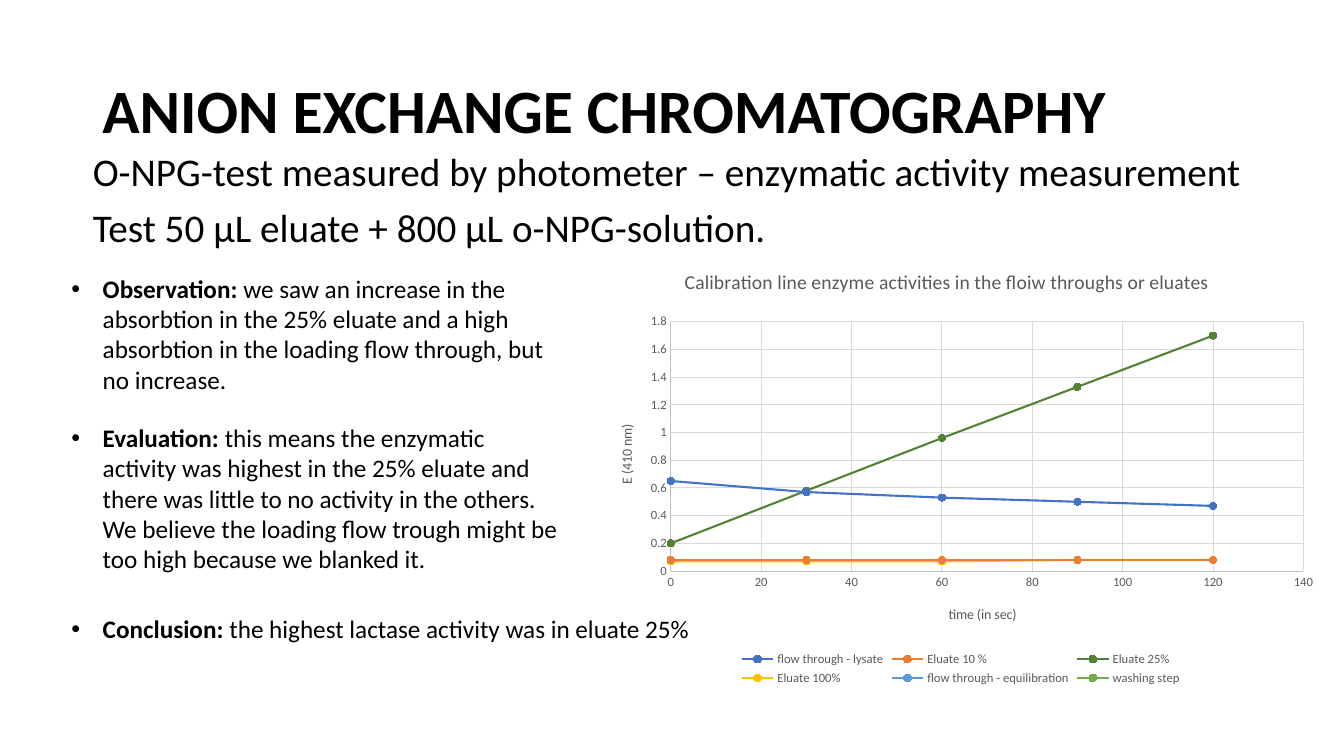
from dataclasses import dataclass

from lxml import etree
from pptx import Presentation
from pptx.chart.data import XyChartData
from pptx.dml.color import RGBColor
from pptx.enum.chart import XL_CHART_TYPE, XL_LEGEND_POSITION, XL_MARKER_STYLE, XL_TICK_MARK
from pptx.enum.text import MSO_ANCHOR
from pptx.oxml.ns import qn
from pptx.util import Cm, Pt

SCATTER = XL_CHART_TYPE.XY_SCATTER_SMOOTH
LEGEND_BOTTOM = XL_LEGEND_POSITION.BOTTOM
CIRCLE = XL_MARKER_STYLE.CIRCLE
NO_TICK = XL_TICK_MARK.NONE
MIDDLE, TOP = MSO_ANCHOR.MIDDLE, MSO_ANCHOR.TOP


@dataclass(frozen=True)
class Theme:
    font: str = "Calibri"
    text: str = "000000"
    chart_text: str = "595959"
    axis: str = "BFBFBF"
    grid: str = "D9D9D9"
    title_size: int = 44
    subtitle_size: int = 28
    body_size: int = 18
    chart_title_size: int = 14
    axis_title_size: int = 10
    label_size: int = 9


theme = Theme()


def style_font(font, size, color, bold=False):
    font.name, font.size, font.bold = theme.font, Pt(size), bold
    font.color.rgb = RGBColor.from_string(color)


def set_layout(element, index, **settings):
    """Give a chart part a manual layout, in fractions of the chart area."""
    layout = element.find(qn("c:layout"))
    if layout is None:
        layout = etree.Element(qn("c:layout"))
        element.insert(index, layout)
    manual = etree.SubElement(layout, qn("c:manualLayout"))
    for name, value in settings.items():
        etree.SubElement(manual, qn(f"c:{name}")).set("val", str(value))


presentation = Presentation()
presentation.slide_width, presentation.slide_height = Cm(33.87), Cm(19.05)
slide = presentation.slides.add_slide(presentation.slide_layouts[6])

# Headings
headings = [
    (2.33, 1.01, 29.21, 3.68, MIDDLE, theme.title_size, True,
     ["ANION EXCHANGE CHROMATOGRAPHY"]),
    (2.09, 3.71, 30.1, 4.32, TOP, theme.subtitle_size, False,
     ["O-NPG-test measured by photometer – enzymatic activity measurement",
      "Test 50 μL eluate + 800 μL o-NPG-solution."]),
]
for left, top, width, height, anchor, size, bold, lines in headings:
    frame = slide.shapes.add_textbox(Cm(left), Cm(top), Cm(width), Cm(height)).text_frame
    frame.word_wrap = True
    frame.vertical_anchor = anchor
    frame.text = "\n".join(lines)
    for number, paragraph in enumerate(frame.paragraphs):
        paragraph.line_spacing = 0.9
        if number:
            paragraph.space_before = Pt(10)
        style_font(paragraph.runs[0].font, size, theme.text, bold)

# Enzyme activity chart
seconds = [0, 30, 60, 90, 120]
activities = [
    ("flow through - lysate", "4472C4", "4472C4", [0.65, 0.57, 0.53, 0.5, 0.47]),
    ("Eluate 10 %", "ED7D31", "ED7D31", [0.08] * 5),
    ("Eluate 25%", "548235", "A9D18E", [0.2, 0.58, 0.96, 1.33, 1.7]),
    ("Eluate 100%", "FFC000", "FFC000", [0.07, 0.07, 0.07, 0.08, 0.08]),
    ("flow through - equilibration", "5B9BD5", "5B9BD5", [0.08] * 5),
    ("washing step", "70AD47", "70AD47", [0.08] * 5),
]
chart_data = XyChartData()
for name, _, _, extinctions in activities:
    series_data = chart_data.add_series(name)
    for second, extinction in zip(seconds, extinctions):
        series_data.add_data_point(second, extinction)
chart = slide.shapes.add_chart(
    SCATTER, Cm(14.94), Cm(6.5), Cm(18.54), Cm(10.87), chart_data).chart
style_font(chart.font, theme.axis_title_size, theme.text)
chart.plots[0].vary_by_categories = False

for series, (_, line_color, marker_color, _) in zip(chart.plots[0].series, activities):
    series.smooth = True
    series.format.line.width = Pt(1.5)
    series.format.line.color.rgb = RGBColor.from_string(line_color)
    series.marker.style, series.marker.size = CIRCLE, 5
    series.marker.format.fill.solid()
    series.marker.format.fill.fore_color.rgb = RGBColor.from_string(marker_color)
    series.marker.format.line.color.rgb = RGBColor.from_string(line_color)

for axis, maximum, step in [(chart.category_axis, 140, 20), (chart.value_axis, 1.8, 0.2)]:
    axis.minimum_scale, axis.maximum_scale, axis.major_unit = 0, maximum, step
    axis.major_tick_mark = axis.minor_tick_mark = NO_TICK
    axis.has_major_gridlines = True
    style_font(axis.tick_labels.font, theme.label_size, theme.chart_text)
    axis.tick_labels.number_format = "General"
    axis.tick_labels.number_format_is_linked = False
    for line, color in [(axis.format.line, theme.axis),
                        (axis.major_gridlines.format.line, theme.grid)]:
        line.width = Pt(0.75)
        line.color.rgb = RGBColor.from_string(color)

chart_titles = [
    (chart.chart_title, theme.chart_title_size, 0.12, 0.015,
     "Calibration line enzyme activities in the floiw throughs or eluates"),
    (chart.category_axis.axis_title, theme.axis_title_size, 0.48, 0.8, "time (in sec)"),
    (chart.value_axis.axis_title, theme.axis_title_size, 0.03, 0.38, "E (410 nm)"),
]
for title, size, x, y, text in chart_titles:
    title.text_frame.text = text
    style_font(title.text_frame.paragraphs[0].runs[0].font, size, theme.chart_text)
    set_layout(title._element, 1, xMode="edge", yMode="edge", x=x, y=y)
set_layout(chart.plots[0]._element.getparent(), 0, layoutTarget="inner",
           xMode="edge", yMode="edge", x=0.106, y=0.148, w=0.86, h=0.578)

chart.has_legend = True
chart.legend.position = LEGEND_BOTTOM
chart.legend.include_in_layout = False
style_font(chart.legend.font, theme.label_size, theme.chart_text)

# Findings
findings = [
    (6.76, 12.88, 4.11, True, "Observation: ",
     "we saw an increase in the absorbtion in the 25% eluate and a high absorbtion "
     "in the loading flow through, but no increase."),
    (10.52, 12.88, 4.88, True, "Evaluation: ",
     "this means the enzymatic activity was highest in the 25% eluate and there was "
     "little to no activity in the others. We believe the loading flow trough might "
     "be too high because we blanked it."),
    (15.34, 16.26, 1.8, False, "Conclusion: ",
     "the highest lactase activity was in eluate 25%"),
]
for top, width, height, wrap, label, statement in findings:
    frame = slide.shapes.add_textbox(Cm(1.55), Cm(top), Cm(width), Cm(height)).text_frame
    frame.word_wrap = wrap
    paragraph = frame.paragraphs[0]
    properties = paragraph._p.get_or_add_pPr()
    properties.set("marL", str(Cm(0.79)))
    properties.set("indent", str(-Cm(0.79)))
    etree.SubElement(properties, qn("a:buFont")).set("typeface", "Arial")
    etree.SubElement(properties, qn("a:buChar")).set("char", "•")
    for text, bold in [(label, True), (statement, False)]:
        run = paragraph.add_run()
        run.text = text
        style_font(run.font, theme.body_size, theme.text, bold)

presentation.save("out.pptx")
